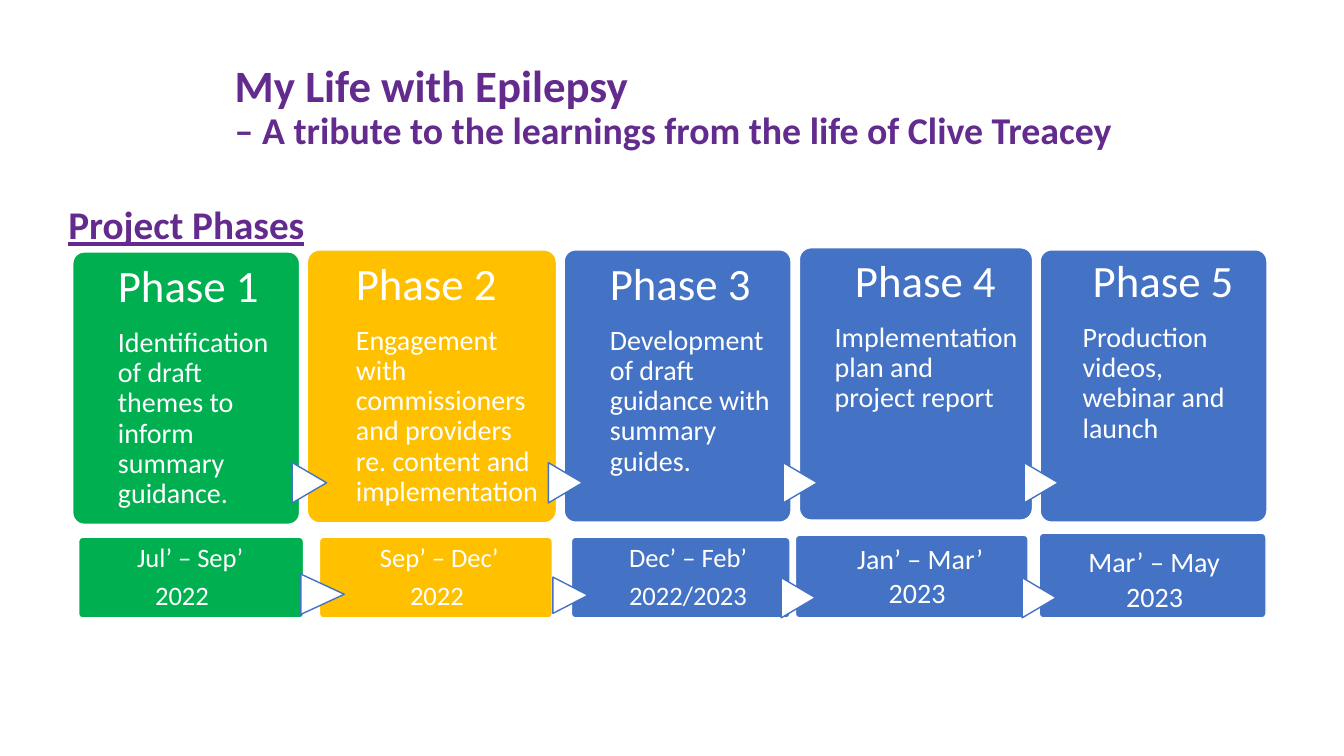
from pptx import Presentation
from pptx.dml.color import RGBColor
from pptx.enum.shapes import MSO_SHAPE
from pptx.enum.text import MSO_ANCHOR, PP_ALIGN
from pptx.util import Pt

ROUNDED = MSO_SHAPE.ROUNDED_RECTANGLE
TRIANGLE = MSO_SHAPE.FLOWCHART_EXTRACT
TOP, MIDDLE = MSO_ANCHOR.TOP, MSO_ANCHOR.MIDDLE
LEFT = PP_ALIGN.LEFT
FONT = "Calibri"
COLORS = {
    "purple": "632B8D",
    "green": "00B050",
    "yellow": "FFC000",
    "blue": "4472C4",
    "white": "FFFFFF",
}

presentation = Presentation()
presentation.slide_width, presentation.slide_height = Pt(960), Pt(540)
slide = presentation.slides.add_slide(presentation.slide_layouts[6])


def add_block(kind, box, fill, line):
    shape = slide.shapes.add_shape(kind, *map(Pt, box))
    shape.shadow.inherit = False
    shape.fill.solid()
    shape.fill.fore_color.rgb = RGBColor.from_string(COLORS[fill])
    shape.line.color.rgb = RGBColor.from_string(COLORS[line])
    shape.line.width = Pt(1)
    if kind == ROUNDED:
        shape.adjustments[0] = 0.05
    else:
        shape.rotation = 90
    return shape


def write(shape, lines, color, margins=(7.2, 3.6, 7.2, 3.6), spacing=0.9, anchor=TOP):
    frame = shape.text_frame
    frame.word_wrap = True
    frame.vertical_anchor = anchor
    frame.margin_left, frame.margin_top, frame.margin_right, frame.margin_bottom = map(Pt, margins)
    for index, (text, size, indent, after) in enumerate(lines):
        paragraph = frame.paragraphs[0] if index == 0 else frame.add_paragraph()
        paragraph.text = text
        paragraph.alignment = LEFT
        paragraph.line_spacing = spacing
        paragraph.space_after = Pt(after)
        paragraph._p.get_or_add_pPr().set("marL", str(Pt(indent)))
        paragraph.font.name = FONT
        paragraph.font.size = Pt(size)
        paragraph.font.color.rgb = RGBColor.from_string(COLORS[color])
    return frame.paragraphs


title = slide.shapes.add_textbox(Pt(160.6), Pt(10.8), Pt(715), Pt(133.2))
title_lines = [
    ("My Life with Epilepsy", 32, 0, 0),
    ("– A tribute to the learnings from the life of Clive Treacey", 27, 0, 0),
]
for paragraph in write(title, title_lines, "purple", anchor=MIDDLE):
    paragraph.font.bold = True

heading = slide.shapes.add_textbox(Pt(41.8), Pt(139.7), Pt(824.4), Pt(386.6))
for paragraph in write(heading, [("Project Phases", 28, 0, 0)], "purple", spacing=1):
    paragraph.font.bold = True
    paragraph.font.underline = True

phases = [
    ("green", (52, 180, 162, 194.5), (84.2, 180, 121, 194.5), 0,
     "Identification of draft themes to inform summary guidance."),
    ("yellow", (219.5, 178.5, 178, 195), (254.2, 178.5, 132.5, 195), 0,
     "Engagement with commissioners and providers re. content and implementation."),
    ("blue", (403, 178.5, 162, 194.5), (435.6, 178.5, 121, 194.5), 0,
     "Development of draft guidance with summary guides."),
    ("blue", (571, 177, 166.5, 194.5), (596.2, 176.4, 132.5, 267), 14.5,
     "Implementation plan and project report"),
    ("blue", (743, 178.5, 162, 194.5), (773.3, 176.4, 123.8, 279.4), 7.2,
     "Production videos, webinar and launch"),
]
for color, card, text_box, indent, description in phases:
    add_block(ROUNDED, card, color, "white")
for number, (color, card, text_box, indent, description) in enumerate(phases, 1):
    label = slide.shapes.add_textbox(*map(Pt, text_box))
    lines = [(f"Phase {number}", 32, indent, 11.2), (description, 20, 0, 7)]
    write(label, lines, "white", margins=(0, 8.6, 0, 0))

short_dates = [
    ("green", (56.2, 383.8, 160.6, 57.6), (97.9, 383.8, 119.5, 57.6), "Jul’ – Sep’", "2022", 12.9),
    ("yellow", (228.2, 383.8, 166.3, 57.6), (271.4, 383.8, 123.8, 57.6), "Sep’ – Dec’", "2022", 21.5),
    ("blue", (408.2, 383.8, 156.2, 57.6), (449.3, 383.8, 116.6, 57.6), "Dec’ – Feb’", "2022/2023", 0),
]
for color, bar, text_box, months, year, indent in short_dates:
    add_block(ROUNDED, bar, color, "white")
    label = slide.shapes.add_textbox(*map(Pt, text_box))
    lines = [(months, 19, 0, 6.65), (year, 19, indent, 6.65)]
    write(label, lines, "white", margins=(0, 5, 0, 0))

late_dates = [
    ((568.1, 382.3, 166.3, 59), "Jan’ – Mar’", 36.2, 58.8, 3.6, 0),
    ((742.3, 380.9, 162, 60.5), "Mar’ – May", 27.1, 54.2, 7.4, 1),
]
for bar, months, months_indent, year_indent, top_margin, gap in late_dates:
    shape = add_block(ROUNDED, bar, "blue", "white")
    lines = [(months, 20, months_indent, gap), ("2023", 20, year_indent, 0)]
    write(shape, lines, "white", margins=(7.2, top_margin, 7.2, 3.6), spacing=1)

card_arrows = [(left, 332.6, 28.8, 24.5) for left in (206.6, 389.5, 557.3, 729.4)]
date_arrows = [
    (216, 409, 28.8, 31),
    (394.6, 412.6, 25.9, 25.2),
    (555.8, 414.7, 28.8, 24.5),
    (727.9, 414.7, 28.8, 24.5),
]
for arrow in card_arrows + date_arrows:
    add_block(TRIANGLE, arrow, "white", "blue")

presentation.save("out.pptx")
